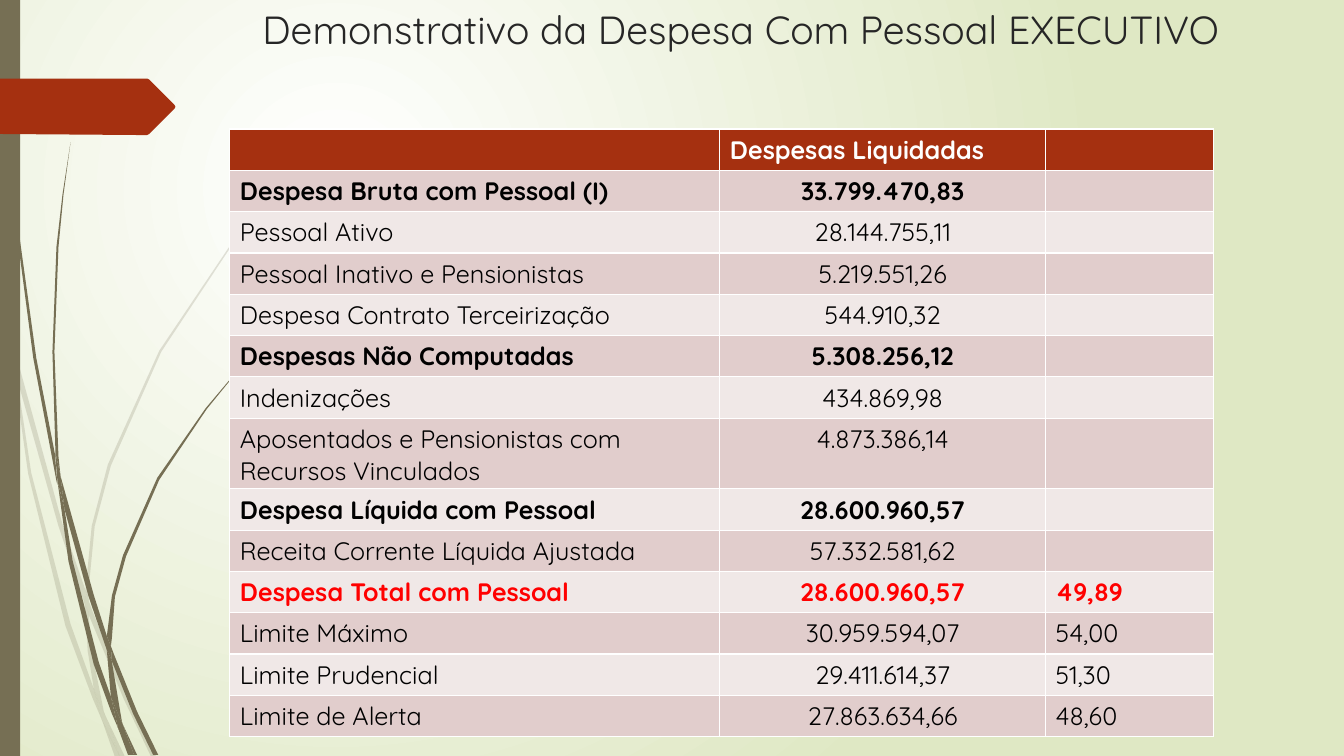
from typing import NamedTuple

from pptx import Presentation
from pptx.dml.color import RGBColor
from pptx.enum.shapes import MSO_SHAPE
from pptx.enum.text import MSO_ANCHOR, PP_ALIGN
from pptx.oxml import parse_xml
from pptx.oxml.ns import nsdecls, qn
from pptx.util import Inches, Pt

FONT = "Quicksand"
WHITE = RGBColor(0xFF, 0xFF, 0xFF)
BLACK = RGBColor(0x00, 0x00, 0x00)
RED = RGBColor(0xFF, 0x00, 0x00)
TITLE_GREY = RGBColor(0x26, 0x26, 0x26)
PALE_GREEN = RGBColor(0xDF, 0xE8, 0xC4)
OLIVE = RGBColor(0x76, 0x6F, 0x54)
RUST = RGBColor(0xA5, 0x30, 0x10)
BANDS = (RGBColor(0xE1, 0xCD, 0xCC), RGBColor(0xF0, 0xE8, 0xE7))

Outline = list[tuple[float, float]]


class Expense(NamedTuple):
    label: str
    amount: str
    percent: str = ""
    bold: bool = False
    color: RGBColor = BLACK


class Grass(NamedTuple):
    opacity: int
    blades: list[Outline]


EXPENSES = [
    Expense("Despesa Bruta com Pessoal (I)", "33.799.470,83", bold=True),
    Expense("Pessoal Ativo", "28.144.755,11"),
    Expense("Pessoal Inativo e Pensionistas", "5.219.551,26"),
    Expense("Despesa Contrato Terceirização", "544.910,32"),
    Expense("Despesas Não Computadas", "5.308.256,12", bold=True),
    Expense("Indenizações", "434.869,98"),
    Expense("Aposentados e Pensionistas com Recursos Vinculados", "4.873.386,14"),
    Expense("Despesa Líquida com Pessoal", "28.600.960,57", bold=True),
    Expense("Receita Corrente Líquida Ajustada", "57.332.581,62"),
    Expense("Despesa Total com Pessoal", "28.600.960,57", "49,89", True, RED),
    Expense("Limite Máximo", "30.959.594,07", "54,00"),
    Expense("Limite Prudencial", "29.411.614,37", "51,30"),
    Expense("Limite de Alerta", "27.863.634,66", "48,60"),
]

# Outlines in inches
FAINT_GRASS = Grass(20, [
    [(0.11, 3.5), (0.09, 3.22), (0, 2.82), (0, 2.99), (0.1, 3.44)],
    [(0.58, 5.22), (0.84, 5.99), (0.85, 5.86), (0.62, 5.2), (0.14, 3.45), (0.17, 3.76)],
    [(0.92, 6.07), (0.88, 5.96), (0.88, 6.1), (1.23, 6.94), (1.5, 7.51), (1.55, 7.51),
     (1.27, 6.92)],
    [(1.19, 7.51), (1.24, 7.51), (1.05, 7.11)],
    [(0.93, 6.83), (0.7, 6.19), (0.31, 4.69), (0.17, 3.76), (0.11, 3.5), (0.28, 4.7),
     (0.65, 6.21), (0.92, 6.93), (1.01, 7.14), (0.99, 7.07)],
    [(0.84, 5.99), (0.87, 6.46), (0.93, 6.83), (0.96, 6.92), (1.05, 7.11), (1.03, 7.06),
     (0.91, 6.46), (0.88, 6.1), (0.88, 6.08)],
    [(0.88, 5.84), (0.94, 5.22), (1.1, 4.62), (1.6, 3.49), (2.29, 2.45), (2.68, 1.98),
     (2.9, 1.75), (3.12, 1.54), (3.12, 1.53), (2.89, 1.75), (2.68, 1.97), (2.28, 2.44),
     (1.58, 3.48), (1.07, 4.61), (0.91, 5.22), (0.85, 5.84), (0.85, 5.86), (0.88, 5.96)],
    [(1.01, 7.14), (1.14, 7.51), (1.19, 7.51)],
    [(0.88, 6.08), (0.88, 6.1), (0.88, 5.96), (0.85, 5.86), (0.84, 5.99)],
    [(0.96, 6.92), (0.93, 6.83), (0.99, 7.07), (1.01, 7.14), (1.19, 7.51), (1.05, 7.11)],
])
SOLID_GRASS = Grass(100, [
    [(0.07, 1.1), (0.17, 2.33), (0.33, 3.55), (0.56, 4.77), (0.57, 4.81), (0.55, 4.57),
     (0.55, 4.53), (0.36, 3.55), (0.19, 2.32), (0.08, 1.09), (0.05, 0.48), (0.04, 0),
     (0.03, 0), (0.04, 0.48)],
    [(0.88, 5.92), (1.06, 6.45), (1.06, 6.31), (0.93, 5.9), (0.6, 4.72), (0.64, 5.05)],
    [(1.13, 6.49), (1.1, 6.41), (1.11, 6.56), (1.32, 7.08), (1.52, 7.49), (1.57, 7.49),
     (1.36, 7.06)],
    [(1.1, 6.91), (0.98, 6.57), (0.72, 5.56), (0.64, 5.05), (0.57, 4.77), (0.68, 5.57),
     (0.93, 6.59), (1.11, 7.08), (1.17, 7.22), (1.16, 7.17)],
    [(0.6, 4.72), (0.58, 4.53), (0.54, 3.49), (0.58, 2.45), (0.63, 1.93), (0.7, 1.41),
     (0.62, 1.93), (0.56, 2.45), (0.52, 3.49), (0.55, 4.49)],
    [(1.33, 7.49), (1.36, 7.49), (1.22, 7.19)],
    [(0.57, 4.77), (0.64, 5.05), (0.6, 4.72), (0.55, 4.49), (0.55, 4.53)],
    [(1.11, 6.33), (1.14, 5.92), (1.25, 5.52), (1.58, 4.76), (2.05, 4.06), (2.31, 3.74),
     (2.45, 3.59), (2.61, 3.44), (2.6, 3.44), (2.45, 3.58), (2.31, 3.73), (2.04, 4.05),
     (1.56, 4.74), (1.22, 5.51), (1.11, 5.91), (1.06, 6.31), (1.1, 6.41)],
    [(1.17, 7.22), (1.27, 7.49), (1.31, 7.49)],
    [(1.06, 6.45), (1.1, 6.91), (1.16, 7.06), (1.22, 7.19), (1.21, 7.16), (1.11, 6.56),
     (1.09, 6.51)],
    [(1.06, 6.45), (1.09, 6.51), (1.11, 6.56), (1.1, 6.41), (1.06, 6.31)],
    [(1.16, 7.06), (1.1, 6.91), (1.16, 7.17), (1.17, 7.22), (1.3, 7.49), (1.33, 7.49),
     (1.22, 7.19)],
])
RIBBON: Outline = [(0, 0.78), (1.46, 0.78), (1.48, 0.79), (1.73, 1.04), (1.74, 1.06),
                   (1.73, 1.08), (1.48, 1.33), (1.46, 1.34), (1.36, 1.34), (0, 1.33)]


def paint(shape, color: RGBColor, opacity: int = 100) -> None:
    shape.shadow.inherit = False
    shape.fill.solid()
    shape.fill.fore_color.rgb = color
    shape.line.fill.background()
    if opacity < 100:
        color_element = shape._element.spPr.find(qn("a:solidFill"))[0]
        color_element.append(parse_xml(f'<a:alpha {nsdecls("a")} val="{opacity * 1000}"/>'))


def draw_outline(shapes, outline: Outline, color: RGBColor, opacity: int = 100) -> None:
    points = [(Inches(x), Inches(y)) for x, y in outline]
    builder = shapes.build_freeform(*points[0])
    builder.add_line_segments(points[1:], close=True)
    paint(builder.convert_to_shape(), color, opacity)


def write(text_frame, text: str, size: int, color: RGBColor, bold: bool = False,
          alignment: PP_ALIGN = PP_ALIGN.LEFT) -> None:
    paragraph = text_frame.paragraphs[0]
    paragraph.alignment = alignment
    paragraph.font.size = Pt(size)
    if not text:
        return
    run = paragraph.add_run()
    run.text = text
    for name, value in {"name": FONT, "size": Pt(size), "bold": bold}.items():
        setattr(run.font, name, value)
    run.font.color.rgb = color


def draw_background(slide) -> None:
    fill = slide.background.fill
    fill.gradient()
    for stop, color in zip(fill.gradient_stops, (WHITE, PALE_GREEN)):
        stop.color.rgb = color
    gradient = slide.element.find(".//" + qn("a:gradFill"))
    gradient.replace(gradient.find(qn("a:lin")), parse_xml(
        f'<a:path {nsdecls("a")} path="circle">'
        '<a:fillToRect l="50000" t="50000" r="100000" b="100000"/></a:path>'))


def draw_table(slide) -> None:
    rows = [Expense("", "Despesas Liquidadas", bold=True, color=WHITE), *EXPENSES]
    widths = (4.86, 3.23, 1.67)
    row_height = Inches(0.41)
    table = slide.shapes.add_table(len(rows), len(widths), Inches(2.28), Inches(1.28),
                                   Inches(sum(widths)), row_height * len(rows)).table
    for column, width in zip(table.columns, widths):
        column.width = Inches(width)
    for row_index, expense in enumerate(rows):
        table.rows[row_index].height = row_height
        texts = (expense.label, expense.amount, expense.percent)
        for column_index, text in enumerate(texts):
            cell = table.cell(row_index, column_index)
            cell.fill.solid()
            cell.fill.fore_color.rgb = BANDS[(row_index - 1) % 2] if row_index else RUST
            centred = row_index > 0 and column_index == 1
            write(cell.text_frame, text, 18, expense.color, expense.bold,
                  PP_ALIGN.CENTER if centred else PP_ALIGN.LEFT)


def main() -> None:
    presentation = Presentation()
    presentation.slide_width = Inches(13.33)
    presentation.slide_height = Inches(7.5)
    slide = presentation.slides.add_slide(presentation.slide_layouts[6])
    draw_background(slide)

    # Grass, side bar and ribbon
    for grass in (FAINT_GRASS, SOLID_GRASS):
        group = slide.shapes.add_group_shape()
        for blade in grass.blades:
            draw_outline(group.shapes, blade, OLIVE, grass.opacity)
    side_bar = slide.shapes.add_shape(MSO_SHAPE.RECTANGLE, 0, 0, Inches(0.2), Inches(7.5))
    paint(side_bar, OLIVE)
    draw_outline(slide.shapes, RIBBON, RUST)

    # Title
    title = slide.shapes.add_textbox(Inches(2.47), 0, Inches(9.75), Inches(1.4))
    for name, value in {"word_wrap": True, "vertical_anchor": MSO_ANCHOR.TOP}.items():
        setattr(title.text_frame, name, value)
    write(title.text_frame, "Demonstrativo da Despesa Com Pessoal EXECUTIVO", 28,
          TITLE_GREY, alignment=PP_ALIGN.CENTER)

    draw_table(slide)
    presentation.save("out.pptx")


if __name__ == "__main__":
    main()
